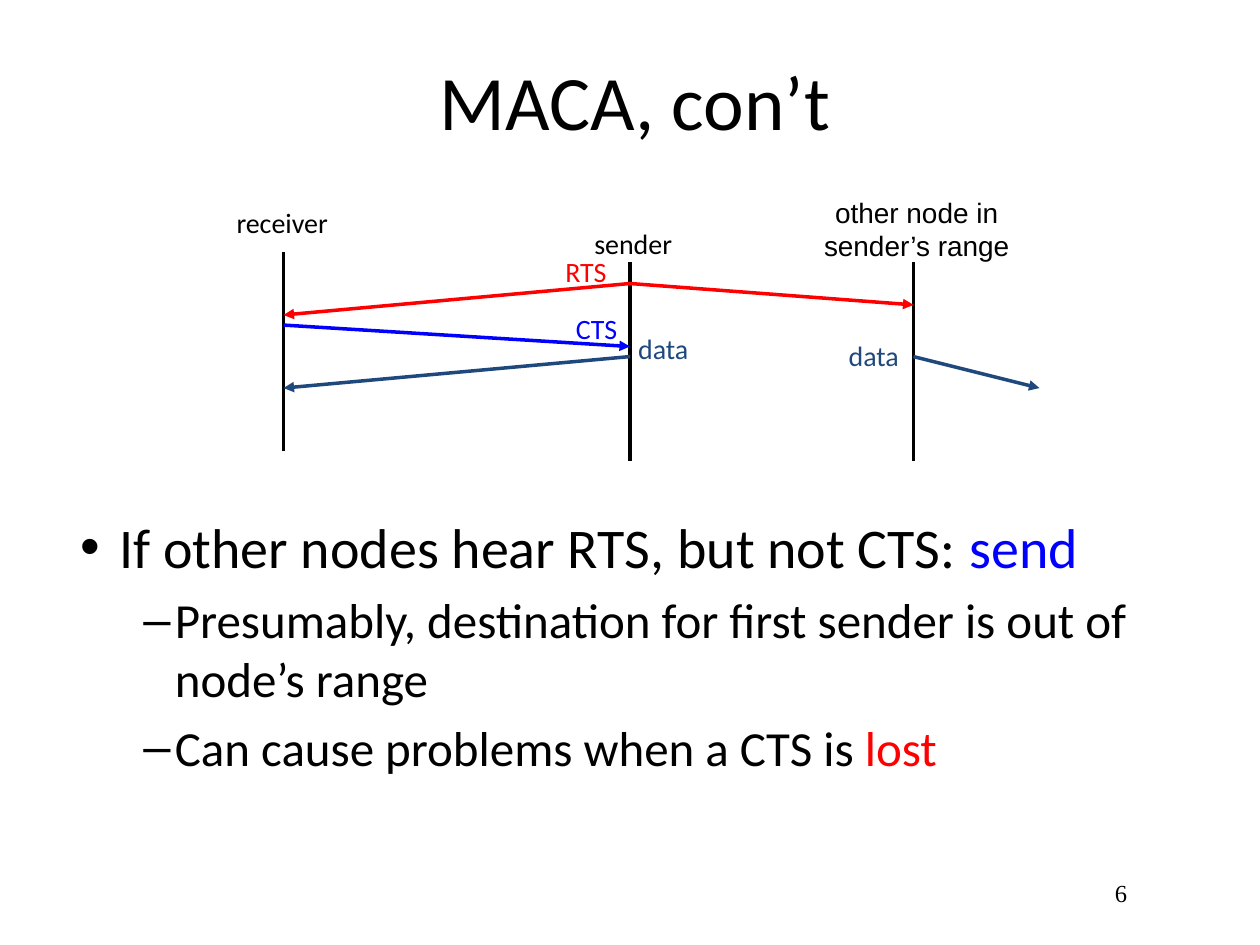
from lxml import etree
from pptx import Presentation
from pptx.dml.color import RGBColor
from pptx.enum.shapes import MSO_CONNECTOR
from pptx.enum.text import MSO_ANCHOR, PP_ALIGN
from pptx.oxml.ns import qn
from pptx.util import Inches, Pt

STRAIGHT = MSO_CONNECTOR.STRAIGHT
MIDDLE = MSO_ANCHOR.MIDDLE
TOP = MSO_ANCHOR.TOP
CENTER = PP_ALIGN.CENTER
LEFT = PP_ALIGN.LEFT

BLACK = "000000"
RED = "FF0000"
BLUE = "0000FF"
NAVY = "1F497D"

RECEIVER, SENDER, OTHER, OUTSIDE = 0.51, 3.26, 5.51, 6.51
LIFELINES = [(RECEIVER, 0.5), (SENDER, 0.58), (OTHER, 0.58)]
LIFELINE_LENGTH = 1.58
MESSAGES = [
    (SENDER, 0.75, OTHER, 0.92, RED),
    (SENDER, 0.75, RECEIVER, 1, RED),
    (RECEIVER, 1.08, SENDER, 1.25, BLUE),
    (SENDER, 1.33, RECEIVER, 1.58, NAVY),
    (OTHER, 1.33, OUTSIDE, 1.58, NAVY),
]
LABELS = [
    (["receiver"], 0, 0.08, 1, 0.37, "Calibri", BLACK),
    (["sender"], 2.84, 0.25, 0.89, 0.37, "Calibri", BLACK),
    (["other node in", "sender’s range"], 4.69, 0, 1.69, 0.64, "Arial", BLACK),
    (["RTS"], 2.59, 0.47, 0.64, 0.36, "Calibri", RED),
    (["CTS"], 2.67, 0.92, 0.65, 0.37, "Calibri", BLUE),
    (["data"], 3.21, 1.08, 0.63, 0.36, "Calibri", NAVY),
    (["data"], 4.88, 1.14, 0.63, 0.36, "Calibri", NAVY),
]
BULLETS = [
    (0, [("If other nodes hear RTS, but not CTS: ", BLACK), ("send", BLUE)]),
    (1, [("Presumably, destination for first sender is out of node’s range", BLACK)]),
    (1, [("Can cause problems when a CTS is ", BLACK), ("lost", RED)]),
]
BULLET_STYLES = [("•", 32, 0.31, 0.31), ("–", 28, 0.75, 0.25)]


def color(value):
    return RGBColor.from_string(value)


def add_text(shapes, lines, left, top, width, height, size, font="Calibri",
             text_color=BLACK, align=CENTER, anchor=TOP, wrap=True):
    shape = shapes.add_textbox(Inches(left), Inches(top), Inches(width), Inches(height))
    frame = shape.text_frame
    frame.word_wrap = wrap
    frame.vertical_anchor = anchor
    frame.text = "\n".join(lines)
    for paragraph in frame.paragraphs:
        paragraph.alignment = align
        paragraph.font.size = Pt(size)
        paragraph.font.name = font
        paragraph.font.color.rgb = color(text_color)


def add_line(shapes, start_x, start_y, end_x, end_y, line_color, arrow=False):
    connector = shapes.add_connector(
        STRAIGHT, Inches(start_x), Inches(start_y), Inches(end_x), Inches(end_y))
    connector.line.width = Pt(2)
    connector.line.color.rgb = color(line_color)
    if arrow:
        line = connector.line._get_or_add_ln()
        etree.SubElement(line, qn("a:tailEnd"), type="triangle")
    etree.SubElement(connector._element.spPr, qn("a:effectLst"))


def add_sequence_diagram(slide, left, top):
    shapes = slide.shapes.add_group_shape().shapes
    for x, y in LIFELINES:
        add_line(shapes, left + x, top + y, left + x, top + y + LIFELINE_LENGTH, BLACK)
    for start_x, start_y, end_x, end_y, line_color in MESSAGES:
        add_line(shapes, left + start_x, top + start_y,
                 left + end_x, top + end_y, line_color, arrow=True)
    for lines, x, y, width, height, font, text_color in LABELS:
        add_text(shapes, lines, left + x, top + y, width, height, 16, font,
                 text_color, wrap=False)


def add_bullets(slide, left, top, width, height):
    shape = slide.shapes.add_textbox(Inches(left), Inches(top), Inches(width), Inches(height))
    frame = shape.text_frame
    frame.word_wrap = True
    for index, (level, runs) in enumerate(BULLETS):
        paragraph = frame.add_paragraph() if index else frame.paragraphs[0]
        character, size, margin, hanging = BULLET_STYLES[level]
        paragraph.level = level
        paragraph.space_before = Pt(size * 0.2)
        paragraph.font.size = Pt(size)
        paragraph.font.name = "Calibri"
        for text, text_color in runs:
            run = paragraph.add_run()
            run.text = text
            run.font.color.rgb = color(text_color)
        properties = paragraph._p.get_or_add_pPr()
        properties.set("marL", str(Inches(margin)))
        properties.set("indent", str(-Inches(hanging)))
        bullet_font = etree.Element(qn("a:buFont"), typeface="Arial")
        bullet = etree.Element(qn("a:buChar"), char=character)
        default_run = properties.find(qn("a:defRPr"))
        default_run.addprevious(bullet_font)
        default_run.addprevious(bullet)


def main():
    presentation = Presentation()
    presentation.slide_width = Inches(10)
    presentation.slide_height = Inches(7.5)
    slide = presentation.slides.add_slide(presentation.slide_layouts[6])
    add_text(slide.shapes, ["6"], 8.75, 6.92, 1, 0.42, 14, "Times New Roman", align=LEFT)
    add_text(slide.shapes, ["MACA, con’t"], 0.58, 0.33, 8.92, 0.92, 44, anchor=MIDDLE)
    add_bullets(slide, 0.54, 4.02, 8.68, 3.31)
    add_sequence_diagram(slide, 1.74, 1.5)
    presentation.save("out.pptx")


if __name__ == "__main__":
    main()
